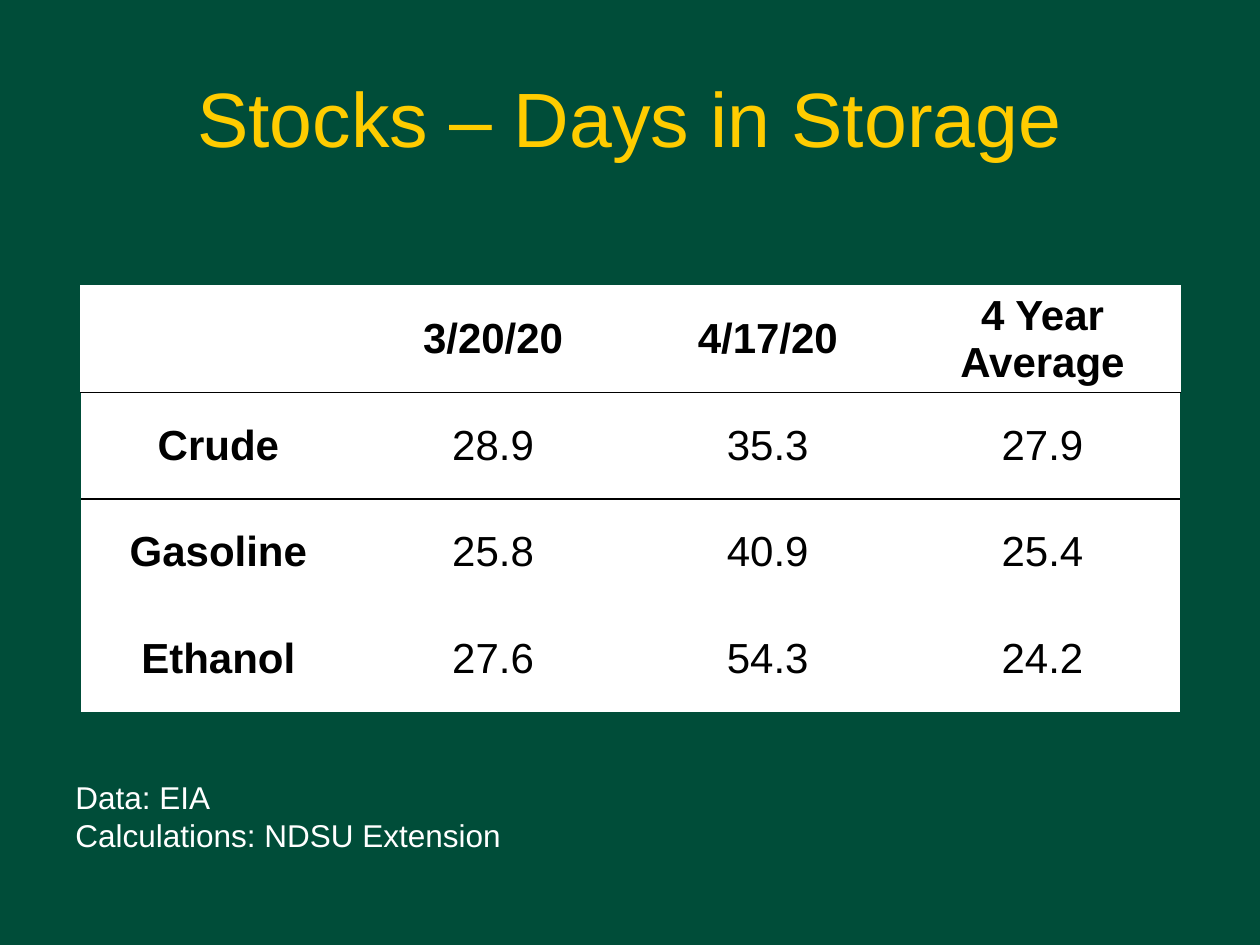
from lxml import etree
from pptx import Presentation
from pptx import util as u
from pptx.dml.color import RGBColor
from pptx.enum import text
from pptx.oxml.ns import qn

TITLE = "Stocks – Days in Storage"
STOCKS = [
    ["", "3/20/20", "4/17/20", "4 Year Average"],
    ["Crude", "28.9", "35.3", "27.9"],
    ["Gasoline", "25.8", "40.9", "25.4"],
    ["Ethanol", "27.6", "54.3", "24.2"],
]
SOURCES = ["Data: EIA", "Calculations: NDSU Extension"]

COLORS = {"green": "004D39", "gold": "FFCC00", "white": "FFFFFF", "black": "000000"}
PX = 914400 // 126
NO_GRID_STYLE = "{2D5ABB26-0587-4C30-8999-92F81FD0307C}"
HEADER_BORDERS = {"lnL": "white", "lnR": "white", "lnT": "white", "lnB": "black"}
BODY_TOP_BORDER = {"lnT": "black"}


def px(*lengths):
    return [u.Emu(length * PX) for length in lengths]


def write(paragraph, words, size, color, bold=False, align=text.PP_ALIGN.CENTER):
    paragraph.text = words
    paragraph.alignment = align
    font_format = {"name": "Arial", "size": u.Pt(size), "bold": bold}
    for name, value in font_format.items():
        setattr(paragraph.font, name, value)
    paragraph.font.color.rgb = RGBColor.from_string(COLORS[color])


def add_borders(cell, borders):
    """Draw 1 pt borders; call before filling, as lines precede the fill in XML."""
    properties = cell._tc.get_or_add_tcPr()
    for side, color in borders.items():
        line = etree.SubElement(properties, qn(f"a:{side}"), w=str(u.Pt(1)))
        fill = etree.SubElement(line, qn("a:solidFill"))
        etree.SubElement(fill, qn("a:srgbClr"), val=COLORS[color])


def add_stock_table(slide):
    frame = slide.shapes.add_table(len(STOCKS), len(STOCKS[0]), *px(81, 286, 1099, 426))
    table = frame.table
    table.horz_banding = False
    table._tbl.tblPr.find(qn("a:tableStyleId")).text = NO_GRID_STYLE
    for r, row in enumerate(STOCKS):
        for c, words in enumerate(row):
            cell = table.cell(r, c)
            cell.vertical_anchor = text.MSO_ANCHOR.MIDDLE
            write(cell.text_frame.paragraphs[0], words, 24, "black", bold=r == 0 or c == 0)
            if r < 2:
                add_borders(cell, BODY_TOP_BORDER if r else HEADER_BORDERS)
            cell.fill.solid()
            cell.fill.fore_color.rgb = RGBColor.from_string(COLORS["white"])


def add_sources(slide):
    frame = slide.shapes.add_textbox(*px(63, 772, 650, 89)).text_frame
    frame.word_wrap = True
    frame.auto_size = text.MSO_AUTO_SIZE.SHAPE_TO_FIT_TEXT
    for i, source in enumerate(SOURCES):
        paragraph = frame.add_paragraph() if i else frame.paragraphs[0]
        write(paragraph, source, 18, "white", align=text.PP_ALIGN.LEFT)


def main():
    deck = Presentation()
    deck.slide_width, deck.slide_height = px(1260, 945)
    slide = deck.slides.add_slide(deck.slide_layouts[5])
    slide.background.fill.solid()
    slide.background.fill.fore_color.rgb = RGBColor.from_string(COLORS["green"])

    title = slide.shapes.title
    title.left, title.top, title.width, title.height = px(63, 38, 1134, 157)
    title.text_frame.vertical_anchor = text.MSO_ANCHOR.MIDDLE
    write(title.text_frame.paragraphs[0], TITLE, 44, "gold")

    add_stock_table(slide)
    add_sources(slide)
    deck.save("out.pptx")


if __name__ == "__main__":
    main()
